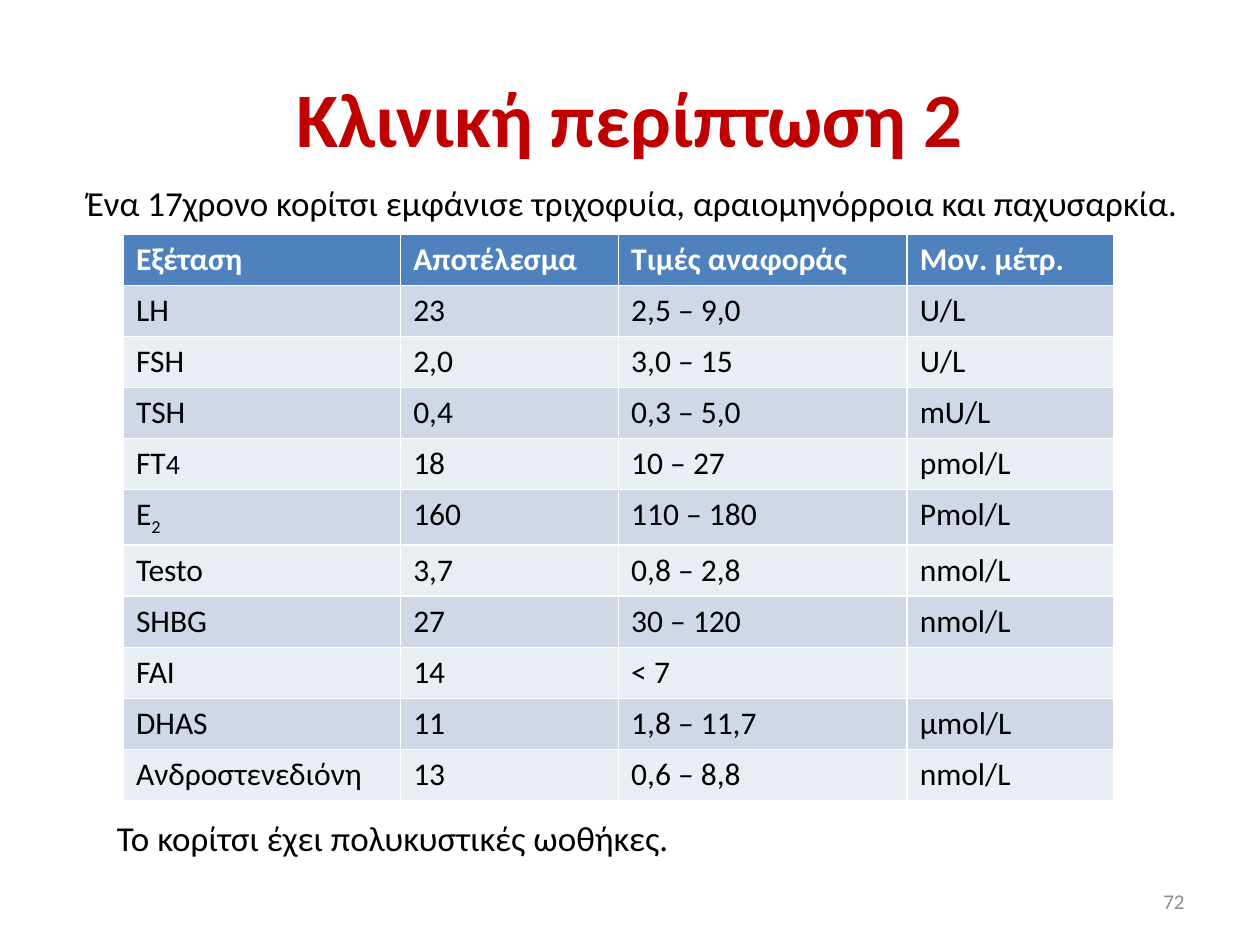
from typing import NamedTuple

from pptx import Presentation
from pptx.dml.color import RGBColor
from pptx.enum.text import MSO_ANCHOR, PP_ALIGN
from pptx.util import Inches, Pt

RED = RGBColor(0xC0, 0x00, 0x00)
BLACK = RGBColor(0x00, 0x00, 0x00)
WHITE = RGBColor(0xFF, 0xFF, 0xFF)
GREY = RGBColor(0x8C, 0x8C, 0x8C)
HEADER_BLUE = RGBColor(0x4F, 0x81, 0xBD)
BAND_DARK = RGBColor(0xD0, 0xD8, 0xE8)
BAND_LIGHT = RGBColor(0xE9, 0xED, 0xF4)


class Box(NamedTuple):
    left: float
    top: float
    width: float
    height: float

    def lengths(self):
        return [Inches(value) for value in self]


class LabTest(NamedTuple):
    name: str
    result: str
    reference: str
    unit: str
    suffix: str = ""
    suffix_size: float = 18
    suffix_baseline: int = 0


HEADINGS = ("Εξέταση", "Αποτέλεσμα", "Tιμές αναφοράς", "Μον. μέτρ.")
COLUMN_WIDTHS = (2.2, 1.73, 2.29, 1.64)
LAB_TESTS = (
    LabTest("LH", "23", "2,5 – 9,0", "U/L"),
    LabTest("FSH", "2,0", "3,0 – 15", "U/L"),
    LabTest("TSH", "0,4", "0,3 – 5,0", "mU/L"),
    LabTest("FT", "18", "10 – 27", "pmol/L", suffix="4", suffix_size=16),
    LabTest("Ε", "160", "110 – 180", "Pmol/L", suffix="2", suffix_baseline=-25),
    LabTest("Testo", "3,7", "0,8 – 2,8", "nmol/L"),
    LabTest("SHBG", "27", "30 – 120", "nmol/L"),
    LabTest("FAI", "14", "< 7", ""),
    LabTest("DHAS", "11", "1,8 – 11,7", "μmol/L"),
    LabTest("Ανδροστενεδιόνη", "13", "0,6 – 8,8", "nmol/L"),
)


def write(frame, text: str, *, size: float = 18, color: RGBColor = BLACK,
          bold: bool = False, align=PP_ALIGN.LEFT, baseline: int = 0) -> None:
    paragraph = frame.paragraphs[0]
    paragraph.alignment = align
    if not text:
        paragraph.font.size = Pt(size)
        return
    run = paragraph.add_run()
    run.text = text
    run.font.name = "Calibri"
    run.font.size = Pt(size)
    run.font.bold = bold
    run.font.color.rgb = color
    if baseline:
        run.font._element.set("baseline", str(baseline * 1000))


def add_title(slide, box: Box, text: str) -> None:
    title = slide.shapes.title
    title.left, title.top, title.width, title.height = box.lengths()
    title.text_frame.vertical_anchor = MSO_ANCHOR.MIDDLE
    write(title.text_frame, text, size=44, color=RED, bold=True, align=PP_ALIGN.CENTER)


def add_text(slide, box: Box, text: str, anchor=MSO_ANCHOR.TOP, **text_format) -> None:
    frame = slide.shapes.add_textbox(*box.lengths()).text_frame
    frame.word_wrap = True
    frame.vertical_anchor = anchor
    write(frame, text, **text_format)


def fill_cell(cell, fill: RGBColor, text: str, **text_format) -> None:
    cell.fill.solid()
    cell.fill.fore_color.rgb = fill
    write(cell.text_frame, text, **text_format)


def add_results(slide, box: Box) -> None:
    results = slide.shapes.add_table(
        len(LAB_TESTS) + 1, len(HEADINGS), *box.lengths()).table
    for column, width in zip(results.columns, COLUMN_WIDTHS):
        column.width = Inches(width)
    for index, heading in enumerate(HEADINGS):
        fill_cell(results.cell(0, index), HEADER_BLUE, heading, color=WHITE, bold=True)
    for row, test in enumerate(LAB_TESTS, start=1):
        band = BAND_DARK if row % 2 else BAND_LIGHT
        for index, value in enumerate(test[:len(HEADINGS)]):
            fill_cell(results.cell(row, index), band, value)
        if test.suffix:
            write(results.cell(row, 0).text_frame, test.suffix,
                  size=test.suffix_size, baseline=test.suffix_baseline)


def main() -> None:
    deck = Presentation()
    deck.slide_width, deck.slide_height = Inches(10), Inches(7.5)
    slide = deck.slides.add_slide(deck.slide_layouts.get_by_name("Title Only"))

    add_title(slide, Box(0.5, 0.3, 9, 1.25), "Κλινική περίπτωση 2")
    add_text(slide, Box(7.17, 6.95, 2.33, 0.4), "72", anchor=MSO_ANCHOR.MIDDLE,
             size=12, color=GREY, align=PP_ALIGN.RIGHT)
    add_text(slide, Box(0.59, 1.39, 8.98, 0.44),
             "Ένα 17χρονο κορίτσι εμφάνισε τριχοφυία, αραιομηνόρροια και παχυσαρκία.",
             size=20)
    add_results(slide, Box(0.98, 1.86, 7.87, 4.46))
    add_text(slide, Box(0.83, 6.43, 6.54, 0.44),
             "To κορίτσι έχει πολυκυστικές ωοθήκες.", size=20)

    deck.save("out.pptx")


if __name__ == "__main__":
    main()
